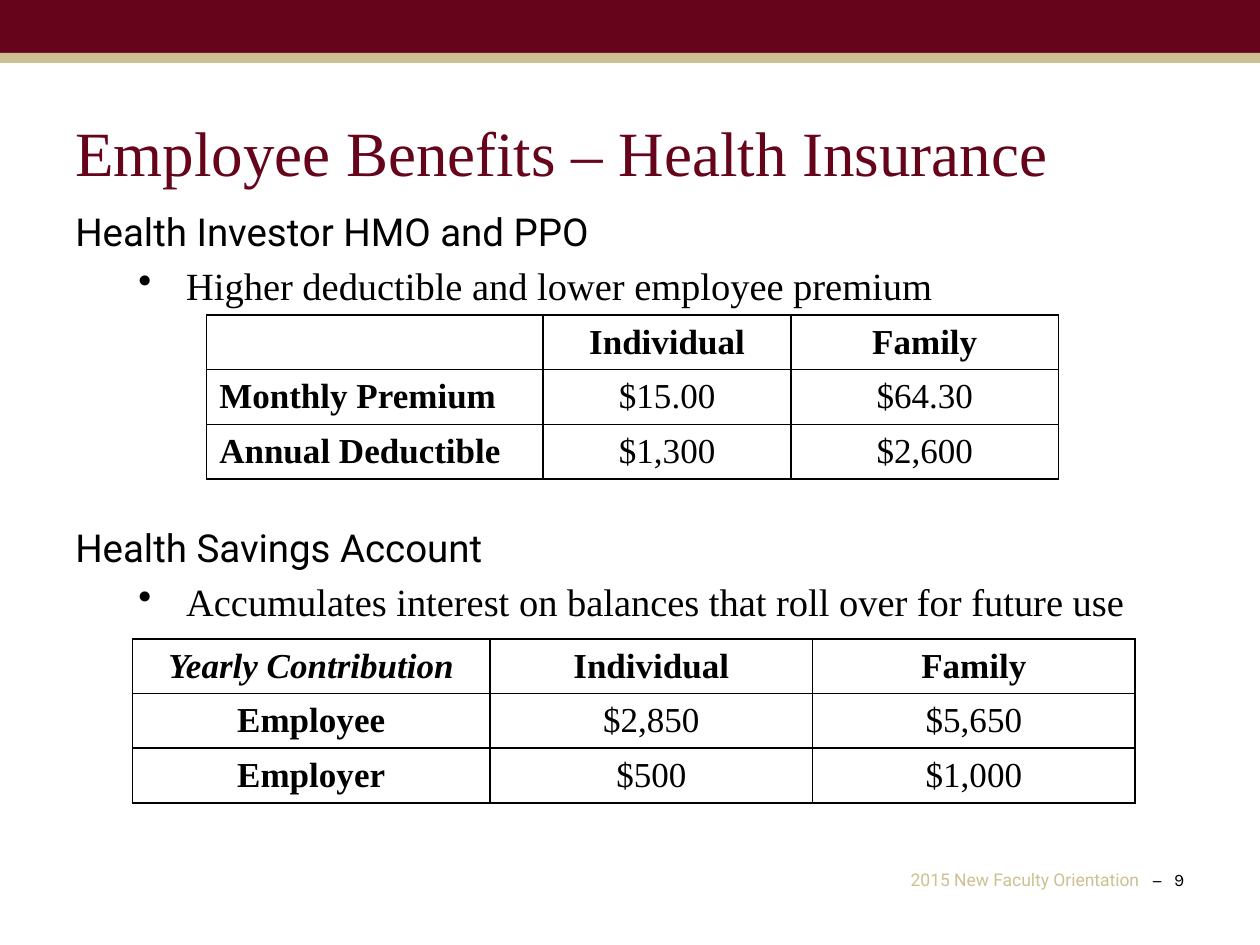
import pptx
import pptx.util
import pptx.dml.color
import pptx.enum.shapes
import pptx.enum.text
import pptx.oxml
import pptx.oxml.ns
from dataclasses import dataclass
from lxml import etree

Inches = pptx.util.Inches
Pt = pptx.util.Pt
ALIGN = pptx.enum.text.PP_ALIGN
qn = pptx.oxml.ns.qn


@dataclass(frozen=True)
class Theme:
    garnet: str = "65041A"
    gold: str = "CDC093"
    black: str = "000000"
    serif: str = "Times New Roman"
    sans: str = "Roboto"
    number_font: str = "Karla"
    title_size: int = 36
    body_size: int = 22
    table_size: int = 20
    footer_size: int = 10


def rgb(value):
    return pptx.dml.color.RGBColor.from_string(value)


def add_run(paragraph, text, font, size, color, bold=False, italic=False):
    run = paragraph.add_run()
    run.text = text
    run.font.name = font
    run.font.size = Pt(size)
    run.font.color.rgb = rgb(color)
    run.font.bold = bold
    run.font.italic = italic


class SlideBuilder:
    def __init__(self, slide, theme):
        self.slide = slide
        self.theme = theme

    def band(self, top, height, color):
        band = self.slide.shapes.add_shape(
            pptx.enum.shapes.MSO_SHAPE.RECTANGLE, 0, Inches(top), Inches(10), Inches(height))
        band.shadow.inherit = False
        band.fill.solid()
        band.fill.fore_color.rgb = rgb(color)
        band.line.fill.background()

    def text_frame(self, left, top, width, height):
        box = self.slide.shapes.add_textbox(
            Inches(left), Inches(top), Inches(width), Inches(height))
        box.text_frame.word_wrap = True
        return box.text_frame

    def line(self, paragraph, text, space_before=0, **style):
        paragraph.space_before = Pt(space_before)
        add_run(paragraph, text, **style)

    def heading(self, paragraph, text, space_before=0):
        self.line(paragraph, text, space_before, font=self.theme.sans,
                  size=self.theme.body_size, color=self.theme.black)

    def bullet(self, paragraph, text):
        paragraph.level = 1
        properties = paragraph._p.get_or_add_pPr()
        properties.set("marL", str(Inches(0.88)))
        properties.set("indent", str(Inches(-0.38)))
        etree.SubElement(properties, qn("a:buChar"), char="•")
        self.line(paragraph, text, 4.4, font=self.theme.serif,
                  size=self.theme.body_size, color=self.theme.black)

    def footer(self, label, number):
        theme = self.theme
        paragraph = self.text_frame(7.13, 6.85, 2.37, 0.27).paragraphs[0]
        tabs = etree.SubElement(paragraph._p.get_or_add_pPr(), qn("a:tabLst"))
        for position in (1.92, 2.09):
            etree.SubElement(tabs, qn("a:tab"), pos=str(Inches(position)), algn="l")
        add_run(paragraph, label, theme.sans, theme.footer_size, theme.gold)
        add_run(paragraph, f"\t−\t{number}", theme.number_font, theme.footer_size, theme.black)

    def borders(self, cell):
        properties = cell._tc.get_or_add_tcPr()
        for index, side in enumerate(("lnL", "lnR", "lnT", "lnB")):
            border = etree.Element(qn(f"a:{side}"), w=str(Pt(1)))
            fill = etree.SubElement(border, qn("a:solidFill"))
            etree.SubElement(fill, qn("a:srgbClr"), val=self.theme.black)
            properties.insert(index, border)

    def table(self, left, top, widths, rows, label_align=ALIGN.CENTER):
        height = Inches(1.3)
        table = self.slide.shapes.add_table(
            len(rows), len(widths), Inches(left), Inches(top),
            Inches(sum(widths)), height).table
        table.first_row = table.horz_banding = False
        for column, width in zip(table.columns, widths):
            column.width = Inches(width)
        for r, row in enumerate(rows):
            table.rows[r].height = height // len(rows)
            for c, text in enumerate(row):
                cell = table.cell(r, c)
                cell.fill.background()
                self.borders(cell)
                cell.vertical_anchor = pptx.enum.text.MSO_ANCHOR.MIDDLE
                if not text:
                    continue
                paragraph = cell.text_frame.paragraphs[0]
                paragraph.alignment = label_align if c == 0 else ALIGN.CENTER
                # Header row and label column are bold; the corner is also italic
                add_run(paragraph, text, self.theme.serif, self.theme.table_size,
                        self.theme.black, bold=r == 0 or c == 0, italic=r == c == 0)


def main():
    theme = Theme()
    presentation = pptx.Presentation()
    presentation.slide_width = Inches(10)
    presentation.slide_height = Inches(7.5)
    slide = presentation.slides.add_slide(presentation.slide_layouts[6])
    builder = SlideBuilder(slide, theme)

    # Header bands and footer
    builder.band(0, 0.46, theme.garnet)
    builder.band(0.42, 0.08, theme.gold)
    builder.footer("2015 New Faculty Orientation", 9)

    # Title and insurance plans
    plans = builder.text_frame(0.5, 0.85, 9, 3.38)
    builder.line(plans.paragraphs[0], "Employee Benefits ‒ Health Insurance",
                 font=theme.serif, size=theme.title_size, color=theme.garnet)
    builder.heading(plans.add_paragraph(), "Health Investor HMO and PPO", space_before=11)
    builder.bullet(plans.add_paragraph(), "Higher deductible and lower employee premium")
    builder.table(1.64, 2.5, (2.67, 1.97, 2.12), (
        ("", "Individual", "Family"),
        ("Monthly Premium", "$15.00", "$64.30"),
        ("Annual Deductible", "$1,300", "$2,600"),
    ), label_align=ALIGN.LEFT)

    # Savings account
    savings = builder.text_frame(0.5, 4.11, 9, 0.89)
    builder.heading(savings.paragraphs[0], "Health Savings Account")
    builder.bullet(savings.add_paragraph(),
                   "Accumulates interest on balances that roll over for future use")
    builder.table(1.05, 5.07, (2.84, 2.56, 2.56), (
        ("Yearly Contribution", "Individual", "Family"),
        ("Employee", "$2,850", "$5,650"),
        ("Employer", "$500", "$1,000"),
    ))

    presentation.save("out.pptx")


if __name__ == "__main__":
    main()
